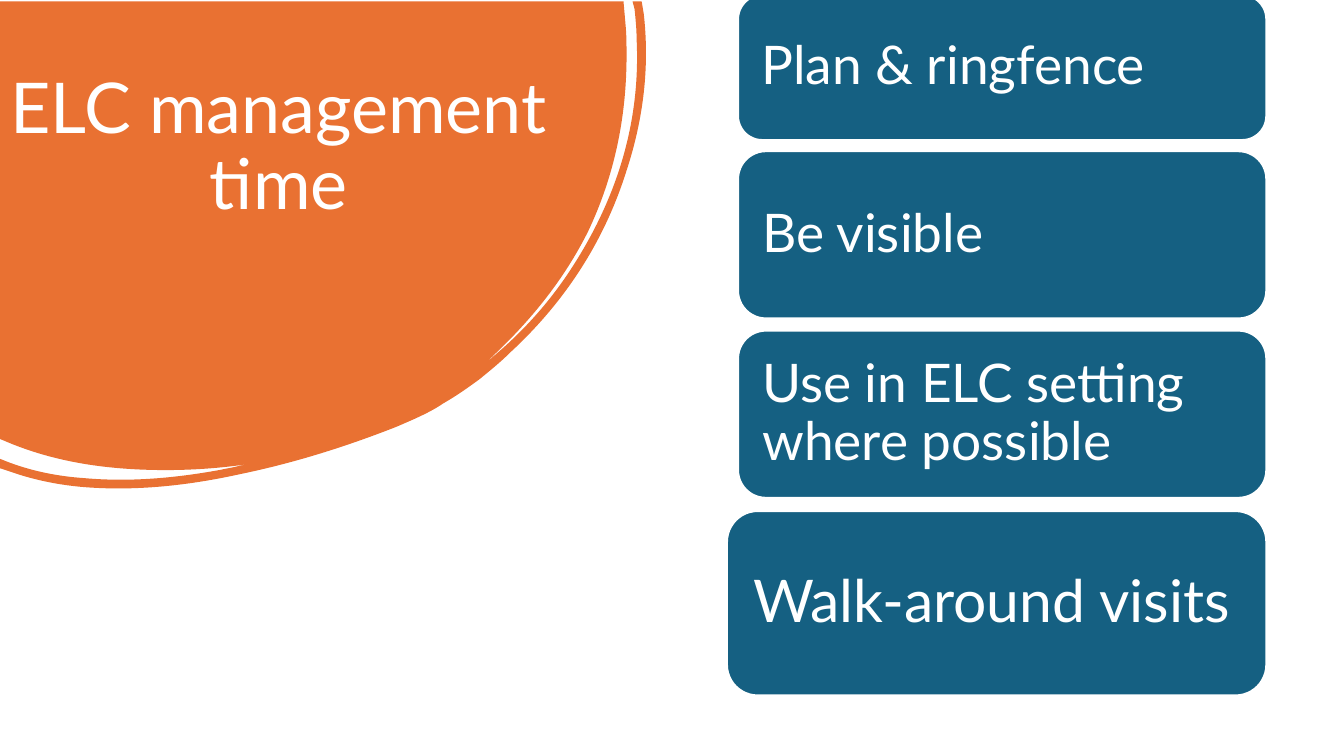
from math import cos, radians, sin

from lxml.etree import Element
from pptx import Presentation
from pptx.dml.color import RGBColor
from pptx.enum.shapes import MSO_SHAPE as Shape
from pptx.enum.text import MSO_ANCHOR as Anchor, PP_ALIGN as Align
from pptx.oxml.ns import qn
from pptx.util import Inches, Pt

COLORS = {"orange": "E97132", "blue": "156082", "white": "FFFFFF"}
FONT = "Lato"
BLOB_ANGLE = 148.1
BLOB_WIDTH, BLOB_HEIGHT = 7.85, 5.72
BLOB_LEFT, BLOB_TOP = -1.16, -1.21
BLOB_OUTLINE = [
    (0, 0), (6.19, 0), (6.21, 0.23),
    (6.22, 0.33, 6.22, 0.44, 6.22, 0.54),
    (6.22, 1.15, 6.1, 1.73, 5.84, 2.28),
    (5.59, 2.78, 5.25, 3.19, 4.85, 3.56),
    (4.86, 3.56, 4.88, 3.54, 4.89, 3.53),
    (5.19, 3.28, 5.45, 2.99, 5.66, 2.67),
    (6.12, 1.97, 6.36, 1.21, 6.32, 0.38),
    (6.32, 0.28, 6.31, 0.18, 6.3, 0.08),
    (6.28, 0), (6.37, 0), (6.39, 0.12),
    (6.45, 0.64, 6.39, 1.16, 6.22, 1.68),
    (6, 2.38, 5.61, 2.98, 5.07, 3.48),
    (4.97, 3.58, 4.87, 3.66, 4.76, 3.75),
    (4.65, 3.83, 4.54, 3.91, 4.4, 3.99),
    (4.27, 4.08, 4.1, 4.15, 3.94, 4.22),
    (3.43, 4.42, 2.92, 4.58, 2.39, 4.69),
    (1.89, 4.8, 1.37, 4.86, 0.85, 4.82),
    (0.6, 4.8, 0.35, 4.75, 0.12, 4.67),
    (0, 4.63), (0, 4.54), (0.01, 4.54),
    (0.27, 4.65, 0.55, 4.71, 0.84, 4.73),
    (1.29, 4.77, 1.74, 4.73, 2.18, 4.65),
    (2.23, 4.64, 2.28, 4.63, 2.33, 4.62),
    (2.37, 4.61, 2.42, 4.6, 2.47, 4.59),
    (2.2, 4.63, 1.93, 4.65, 1.65, 4.65),
    (1.1, 4.65, 0.56, 4.58, 0.05, 4.36),
    (0, 4.34),
]
ACTIONS = [
    ("Plan & ringfence", 0.11, 0, 1.44, 38, 0.16),
    ("Be visible", 0.11, 1.55, 1.66, 38, 0.16),
    ("Use in ELC setting where possible", 0.11, 3.33, 1.66, 38, 0.16),
    ("Walk-around visits", 0, 5.12, 1.83, 42, 0.17),
]


def color(name):
    return RGBColor.from_string(COLORS[name])


def write(frame, words, size, align, inset=None):
    frame.word_wrap = True
    if inset is not None:
        frame.margin_left = frame.margin_right = Inches(inset)
        frame.margin_top = frame.margin_bottom = Inches(inset)
    frame.text = words
    paragraph = frame.paragraphs[0]
    paragraph.alignment = align
    paragraph.line_spacing = 0.9
    font = paragraph.runs[0].font
    font.name = FONT
    font.size = Pt(size)
    font.color.rgb = color("white")


def unturned(segment, left, top):
    center_x, center_y = BLOB_LEFT + BLOB_WIDTH / 2, BLOB_TOP + BLOB_HEIGHT / 2
    c, s = cos(radians(BLOB_ANGLE)), sin(radians(BLOB_ANGLE))
    points = []
    for x, y in zip(segment[::2], segment[1::2]):
        dx, dy = x - center_x, y - center_y
        points.append((Inches(left + center_x + dx * c + dy * s),
                       Inches(top + center_y - dx * s + dy * c)))
    return points


def add_blob(slide, left, top):
    segments = [unturned(segment, left, top) for segment in BLOB_OUTLINE]
    builder = slide.shapes.build_freeform(*segments[0][0])
    builder.add_line_segments([segment[-1] for segment in segments[1:]], close=True)
    blob = builder.convert_to_shape()
    lines = list(blob._element.iter(qn("a:lnTo")))
    for line, segment in zip(lines, segments[1:]):
        if len(segment) == 3:
            line.tag = qn("a:cubicBezTo")
            for position, (x, y) in enumerate(segment[:2]):
                line.insert(position, Element(
                    qn("a:pt"), x=str(x - blob.left), y=str(y - blob.top)))
    blob.rotation = BLOB_ANGLE
    blob.shadow.inherit = False
    blob.fill.solid()
    blob.fill.fore_color.rgb = color("orange")
    blob.line.fill.background()


def add_title(slide, left, top, width, height):
    title = slide.shapes.add_textbox(
        Inches(left), Inches(top), Inches(width), Inches(height))
    write(title.text_frame, "ELC management time", 50, Align.CENTER)


def add_actions(slide, left, top, width):
    for words, indent, offset, height, size, inset in ACTIONS:
        action = slide.shapes.add_shape(
            Shape.ROUNDED_RECTANGLE, Inches(left + indent), Inches(top + offset),
            Inches(width - indent), Inches(height))
        action.shadow.inherit = False
        action.fill.solid()
        action.fill.fore_color.rgb = color("blue")
        action.line.color.rgb = color("white")
        action.line.width = Pt(1.5)
        action.text_frame.vertical_anchor = Anchor.MIDDLE
        write(action.text_frame, words, size, Align.LEFT, inset)


def main():
    deck = Presentation()
    deck.slide_width = Inches(13.33)
    deck.slide_height = Inches(7.5)
    slide = deck.slides.add_slide(deck.slide_layouts[6])
    add_blob(slide, 0, 0)
    add_title(slide, -0.19, 0.68, 5.91, 2.64)
    add_actions(slide, 7.21, -0.05, 5.35)
    deck.save("out.pptx")


if __name__ == "__main__":
    main()
